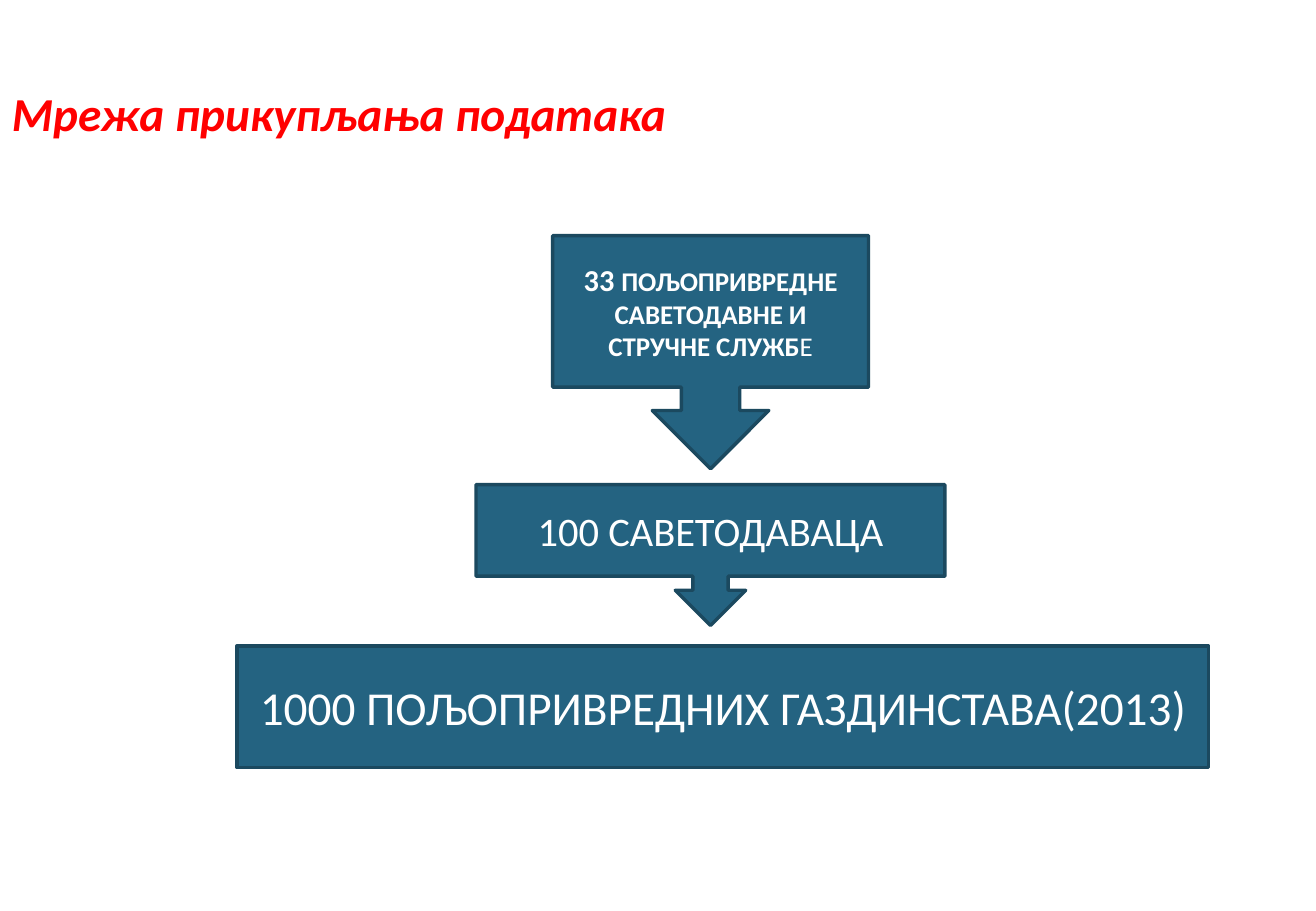
import pptx
import pptx.util
import pptx.dml.color
import pptx.enum.shapes
import pptx.enum.text

Pt = pptx.util.Pt
SHAPE = pptx.enum.shapes.MSO_SHAPE
ALIGN = pptx.enum.text.PP_ALIGN
MIDDLE = pptx.enum.text.MSO_ANCHOR.MIDDLE
RED = pptx.dml.color.RGBColor(0xFF, 0x00, 0x00)
WHITE = pptx.dml.color.RGBColor(0xFF, 0xFF, 0xFF)
TEAL = pptx.dml.color.RGBColor(0x24, 0x63, 0x81)
DARK_TEAL = pptx.dml.color.RGBColor(0x1B, 0x49, 0x5F)


def write_runs(s, runs, color, align, italic=False):
    """Fill a shape with one paragraph of (text, size, bold) runs."""
    tf = s.text_frame
    tf.word_wrap = True
    tf.vertical_anchor = MIDDLE
    p = tf.paragraphs[0]
    p.alignment = align
    for text, size, bold in runs:
        r = p.add_run()
        r.text = text
        r.font.name = "Calibri"
        r.font.size = Pt(size)
        r.font.bold = bold
        r.font.italic = italic
        r.font.color.rgb = color


prs = pptx.Presentation()
prs.slide_width = Pt(780)
prs.slide_height = Pt(540)
slide = prs.slides.add_slide(prs.slide_layouts[6])

title = slide.shapes.add_textbox(Pt(0), Pt(21.6), Pt(430), Pt(90))
write_runs(title, [("Мрежа прикупљања података", 28, True)], RED, ALIGN.LEFT, italic=True)

# Levels of the network, top to bottom: shape, left, top, width, height, runs
levels = [
    (SHAPE.DOWN_ARROW_CALLOUT, 327.6, 139.7, 187.2, 138.2, [
        ("33 ", 18, True),
        ("ПОЉОПРИВРЕДНЕ САВЕТОДАВНЕ И СТРУЧНЕ СЛУЖБ", 16, True),
        ("Е", 16, False),
    ]),
    (SHAPE.DOWN_ARROW_CALLOUT, 282.2, 287.3, 277.9, 83.5, [
        ("100 САВЕТОДАВАЦА", 24, False),
    ]),
    (SHAPE.RECTANGLE, 140.4, 383, 576, 72, [
        ("1000 ПОЉОПРИВРЕДНИХ ГАЗДИНСТАВА(2013)", 28, False),
    ]),
]
for kind, left, top, width, height, runs in levels:
    s = slide.shapes.add_shape(kind, Pt(left), Pt(top), Pt(width), Pt(height))
    s.shadow.inherit = False
    s.fill.solid()
    s.fill.fore_color.rgb = TEAL
    s.line.color.rgb = DARK_TEAL
    s.line.width = Pt(2)
    write_runs(s, runs, WHITE, ALIGN.CENTER)

prs.save("out.pptx")
